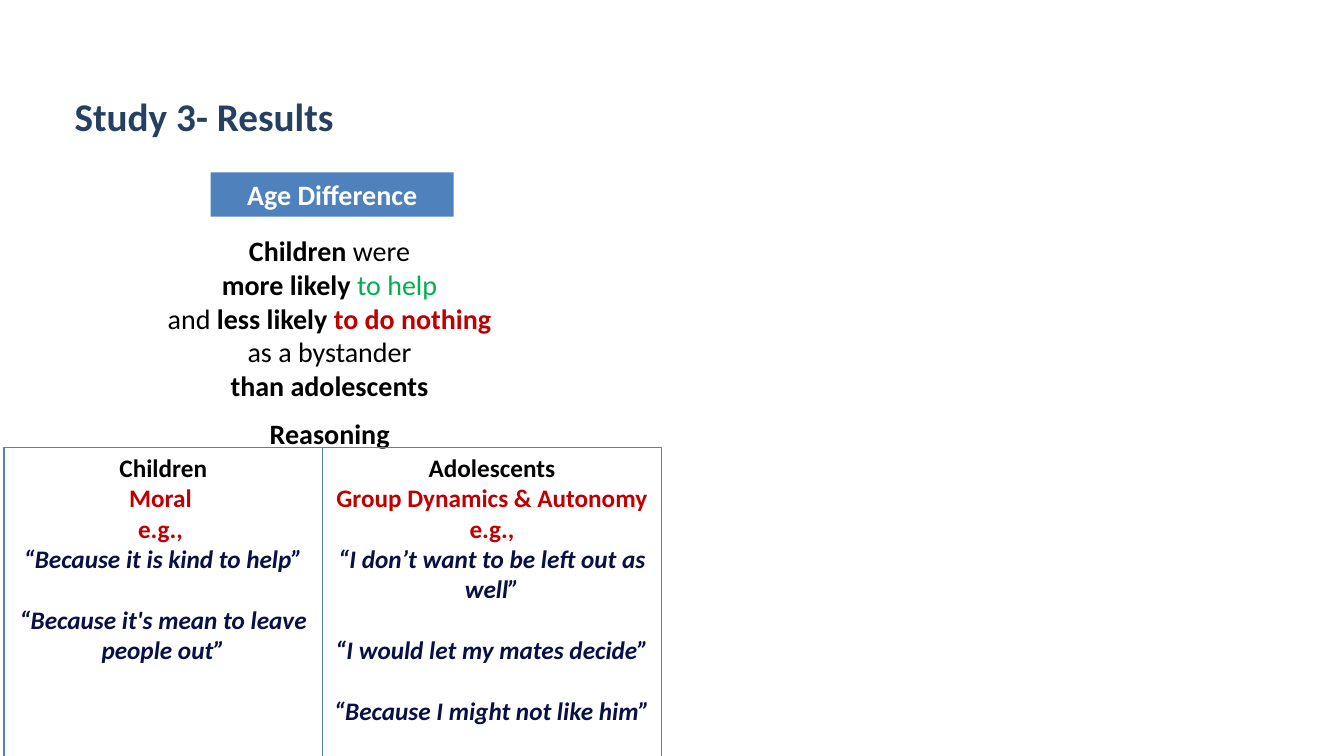
from dataclasses import dataclass

import pptx
import pptx.dml.color
import pptx.enum.shapes
import pptx.enum.text
import pptx.util

Inches = pptx.util.Inches
Pt = pptx.util.Pt
ALIGN = pptx.enum.text.PP_ALIGN
ANCHOR = pptx.enum.text.MSO_ANCHOR

FONT = "Calibri"
COLORS = {
    "title": "254061",
    "blue": "4F81BD",
    "white": "FFFFFF",
    "black": "000000",
    "green": "00B050",
    "red": "C00000",
    "quote": "091047",
}
QUOTE_GAP = 22  # one line of 18 pt text


@dataclass
class Span:
    text: str
    color: str = "black"
    bold: bool = True
    italic: bool = False


@dataclass
class Line:
    spans: list[Span]
    gap: float = 0


@dataclass
class Box:
    left: float
    top: float
    width: float
    height: float
    lines: list[Line]
    size: float = 20
    fill: str | None = None
    border: str | None = None


def rgb(name: str) -> pptx.dml.color.RGBColor:
    return pptx.dml.color.RGBColor.from_string(COLORS[name])


def place(shape, left: float, top: float, width: float, height: float) -> None:
    shape.left, shape.top = Inches(left), Inches(top)
    shape.width, shape.height = Inches(width), Inches(height)


def write_line(para, line: Line, size: float) -> None:
    """Fill a centred paragraph; formatting shared by all spans goes on it."""
    para.alignment = ALIGN.CENTER
    if line.gap:
        para.space_before = Pt(line.gap)
    para.font.name = FONT
    para.font.size = Pt(size)
    single = len(line.spans) == 1
    for span in line.spans:
        run = para.add_run()
        run.text = span.text
        font = para.font if single else run.font
        font.bold = span.bold
        font.italic = span.italic
        font.color.rgb = rgb(span.color)


def draw_box(page, box: Box) -> None:
    area = [Inches(n) for n in (box.left, box.top, box.width, box.height)]
    if box.fill or box.border:
        shape = page.shapes.add_shape(
            pptx.enum.shapes.MSO_SHAPE.RECTANGLE, *area)
        shape.shadow.inherit = False
        if box.fill:
            shape.fill.solid()
            shape.fill.fore_color.rgb = rgb(box.fill)
        else:
            shape.fill.background()
        if box.border:
            shape.line.color.rgb = rgb(box.border)
            shape.line.width = Pt(0.75)
        else:
            shape.line.fill.background()
    else:
        shape = page.shapes.add_textbox(*area)
    frame = shape.text_frame
    frame.word_wrap = True
    frame.vertical_anchor = ANCHOR.TOP
    for index, line in enumerate(box.lines):
        para = frame.add_paragraph() if index else frame.paragraphs[0]
        write_line(para, line, box.size)


def reasoning(group: str, kind: str, example: str, quotes: list[str]) -> list[Line]:
    """Lines of one reasoning column: headings, then spaced quotes."""
    lines = [Line([Span(group)]), Line([Span(kind, "red")]),
             Line([Span(example, "red")])]
    for index, quote in enumerate(quotes):
        lines.append(Line([Span(quote, "quote", italic=True)],
                          QUOTE_GAP if index else 0))
    return lines


FINDING = [
    Line([Span("Children"), Span(" were ", bold=False)]),
    Line([Span("more likely "), Span("to help ", "green", bold=False)]),
    Line([Span("and ", bold=False), Span("less likely "),
          Span("to do nothing ", "red")]),
    Line([Span("as a bystander ", bold=False)]),
    Line([Span("than adolescents ")]),
]

ADOLESCENTS = reasoning(
    "Adolescents", "Group Dynamics & Autonomy", "e.g.,",
    ["“I don’t want to be left out as well”",
     "“I would let my mates decide”",
     "“Because I might not like him”"])

CHILDREN = reasoning(
    "Children", "Moral ", "e.g., ",
    ["“Because it is kind to help”",
     "“Because it's mean to leave people out”"])

BOXES = [
    Box(2.09, 1.71, 2.41, 0.44, [Line([Span("Age Difference", "white")])],
        fill="blue"),
    Box(1.18, 2.27, 4.24, 1.78, FINDING),
    Box(1.15, 4.08, 4.24, 0.44, [Line([Span("Reasoning")])]),
    Box(3.2, 4.44, 3.36, 3.5, ADOLESCENTS, size=18, border="blue"),
    Box(0.04, 4.44, 3.16, 3.9, CHILDREN, size=18, border="blue"),
]


def add_title(page, text: str) -> None:
    title = page.shapes.title
    place(title, 0.64, 0.77, 12.06, 0.66)
    frame = title.text_frame
    frame.text = text
    frame.word_wrap = True
    frame.auto_size = pptx.enum.text.MSO_AUTO_SIZE.NONE
    frame.vertical_anchor = ANCHOR.BOTTOM
    para = frame.paragraphs[0]
    para.alignment = ALIGN.LEFT
    para.font.name = FONT
    para.font.size = Pt(28)
    para.font.bold = True
    para.font.color.rgb = rgb("title")


def main() -> None:
    deck = pptx.Presentation()
    deck.slide_width, deck.slide_height = Inches(13.33), Inches(7.5)
    page = deck.slides.add_slide(deck.slide_layouts.get_by_name("Title Only"))

    # Heading
    add_title(page, "Study 3- Results")

    # Finding and reasoning columns
    for box in BOXES:
        draw_box(page, box)

    deck.save("out.pptx")


if __name__ == "__main__":
    main()
